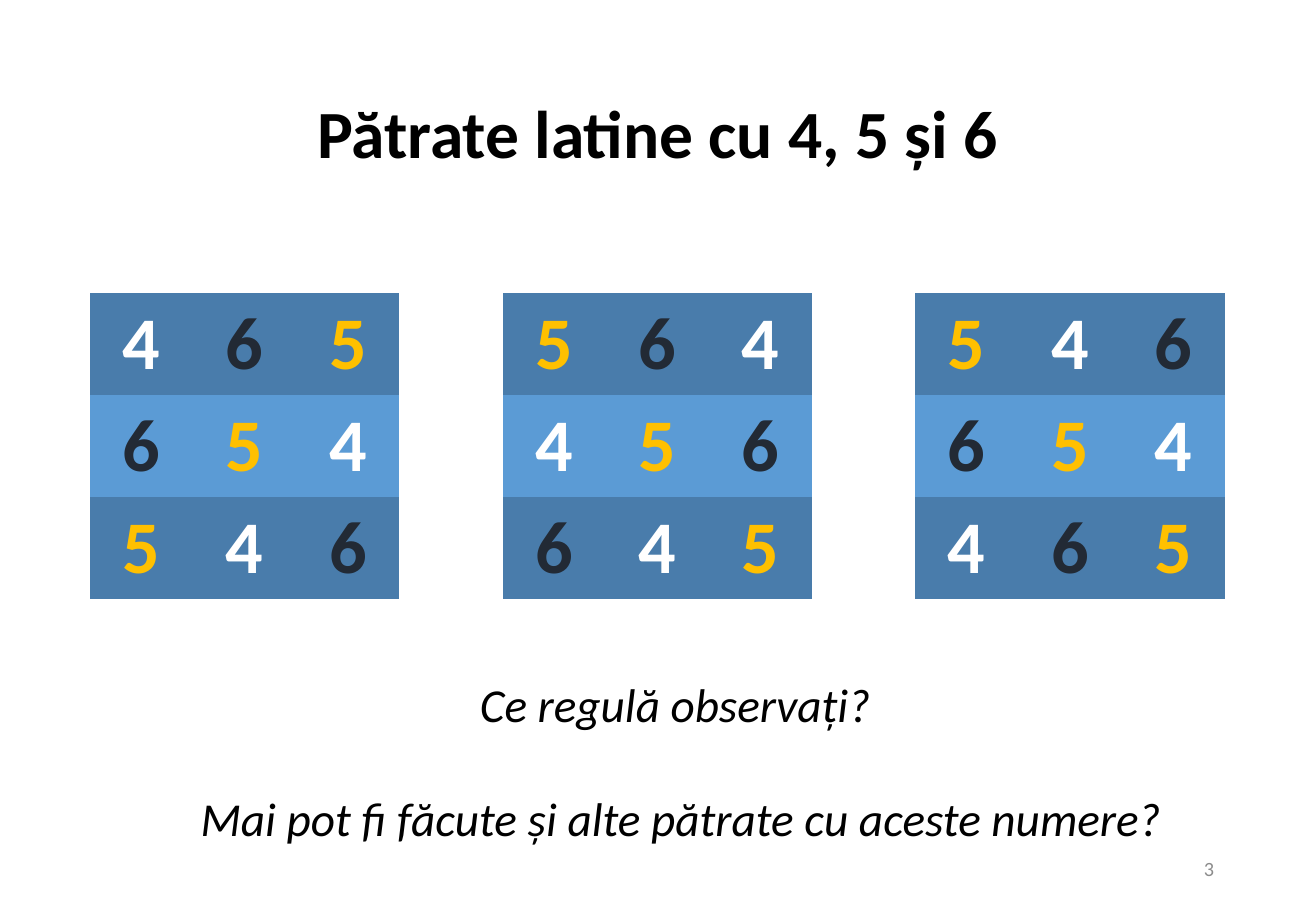
from pptx import Presentation
from pptx.dml.color import RGBColor
from pptx.enum.text import MSO_ANCHOR, PP_ALIGN
from pptx.oxml.ns import qn
from pptx.util import Inches, Pt

BLACK = RGBColor(0x00, 0x00, 0x00)
WHITE = RGBColor(0xFF, 0xFF, 0xFF)
GRAY = RGBColor(0x8C, 0x8C, 0x8C)
NAVY = RGBColor(0x22, 0x2A, 0x35)
GOLD = RGBColor(0xFF, 0xC0, 0x00)
DARK = RGBColor(0x49, 0x7C, 0xAB)
LIGHT = RGBColor(0x5B, 0x9B, 0xD5)

INKS = {"4": WHITE, "5": GOLD, "6": NAVY}
BANDS = [DARK, LIGHT, DARK]
# One string per row; a space is the gap between squares
ROWS = ["465 564 546", "654 456 654", "546 645 465"]
NO_GRID = "{2D5ABB26-0587-4C30-8999-92F81FD0307C}"


class Board:
    font = "Calibri"

    def __init__(self, slide):
        self.slide = slide

    def style(self, para, size, color, align, bold=False, italic=False):
        para.alignment = align
        for run in para.runs:
            font = run.font
            font.name, font.size = self.font, Pt(size)
            font.bold, font.italic = bold, italic
            font.color.rgb = color

    def text(self, box, lines, size, color=BLACK, align=PP_ALIGN.CENTER,
             anchor=MSO_ANCHOR.TOP, gap=0, lead=1.0, **look):
        shape = self.slide.shapes.add_textbox(*map(Inches, box))
        frame = shape.text_frame
        frame.word_wrap = True
        frame.vertical_anchor = anchor
        frame.text = "\n".join(lines)
        for i, para in enumerate(frame.paragraphs):
            para.line_spacing = lead
            if i:
                para.space_before = Pt(gap)
            self.style(para, size, color, align, **look)

    def squares(self, left, top, width, head, tall):
        count = len(ROWS[0])
        shape = self.slide.shapes.add_table(
            len(ROWS) + 1, count, Inches(left), Inches(top),
            Inches(width), Inches(head + tall * len(ROWS)))
        next(shape.element.iter(qn("a:tableStyleId"))).text = NO_GRID
        table = shape.table
        table.first_row = table.horz_banding = False
        for col in table.columns:
            col.width = Inches(width / count)

        # Empty top row, then the banded number rows
        lines = [" " * count] + ROWS
        for r, (line, band) in enumerate(zip(lines, [None] + BANDS)):
            table.rows[r].height = Inches(tall if r else head)
            for c, digit in enumerate(line):
                self.cell(table.cell(r, c), digit.strip(), band)

    def cell(self, cell, digit, band):
        cell.margin_left = cell.margin_right = Inches(0.08)
        if not digit:
            cell.fill.background()
            return
        cell.fill.solid()
        cell.fill.fore_color.rgb = band
        cell.text_frame.text = digit
        self.style(cell.text_frame.paragraphs[0], 44, INKS[digit],
                   PP_ALIGN.CENTER, bold=True)


def main():
    deck = Presentation()
    deck.slide_width, deck.slide_height = Inches(10.83), Inches(7.5)
    board = Board(deck.slides.add_slide(deck.slide_layouts[6]))

    # Title
    board.text((0.74, 0.4, 9.34, 1.45), ["Pătrate latine cu 4, 5 și 6"], 40,
               anchor=MSO_ANCHOR.MIDDLE, lead=0.9, bold=True)

    # Latin squares
    board.squares(left=0.74, top=2, width=9.34, head=0.41, tall=0.84)

    # Questions
    board.text((1.38, 5.51, 8.44, 1.51),
               ["Ce regulă observați? ",
                "Mai pot fi făcute și alte pătrate cu aceste numere?"],
               28, gap=34, italic=True)

    # Page number
    board.text((7.65, 6.95, 2.44, 0.4), ["3"], 12, GRAY, PP_ALIGN.RIGHT,
               MSO_ANCHOR.MIDDLE)

    deck.save("out.pptx")


if __name__ == "__main__":
    main()
